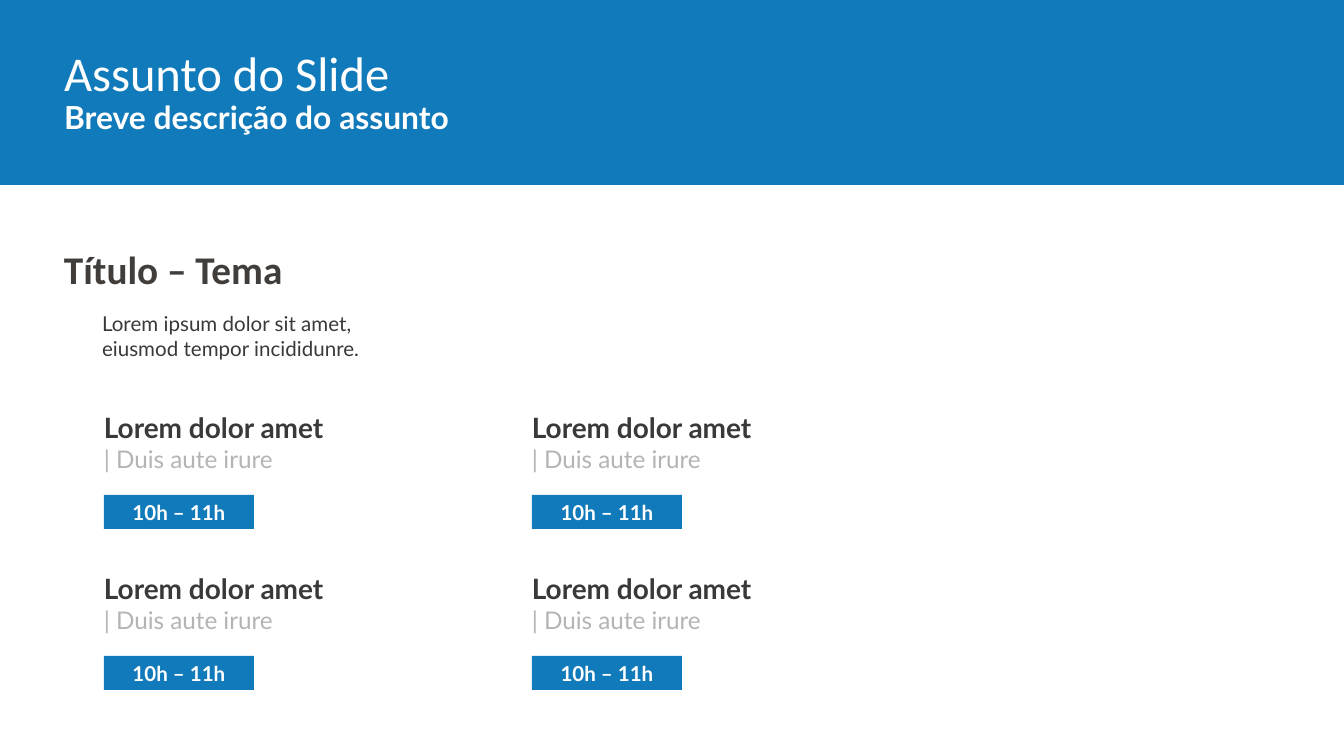
from copy import deepcopy

from pptx import Presentation
from pptx.dml.color import RGBColor
from pptx.enum.shapes import MSO_SHAPE as Shape
from pptx.enum.text import MSO_ANCHOR as Anchor, MSO_AUTO_SIZE as AutoSize, PP_ALIGN as Align
from pptx.util import Pt

EMU_PER_PX = 914400 / 134.4
BLUE = RGBColor(0x11, 0x7A, 0xBA)
WHITE = RGBColor(0xFF, 0xFF, 0xFF)
DARK = RGBColor(0x39, 0x39, 0x39)
BROWN = RGBColor(0x40, 0x3D, 0x3B)
GRAY = RGBColor(0xB4, 0xB4, 0xB4)

TITLE = ("Assunto do Slide", "Calibri", 26, WHITE, False)
TEXTS = [
    ((64, 98, 504, 62), ("Breve descrição do assunto", "Lato", 17, WHITE, True), 0),
    ((64, 245, 450, 46), ("Título – Tema", "Calibri", 21, BROWN, True), 0),
    ((102, 311, 317, 60),
     ("Lorem ipsum dolor sit amet, eiusmod tempor incididunre.", "Lato", 11, DARK, False), 8),
]
SESSIONS = [
    [("Lorem dolor amet", "| Duis aute irure", "10h – 11h"),
     ("Lorem dolor amet", "| Duis aute irure", "10h – 11h")],
    [("Lorem dolor amet", "| Duis aute irure", "10h – 11h"),
     ("Lorem dolor amet", "| Duis aute irure", "10h – 11h")],
]
GRID_LEFT, GRID_TOP = 104, 411
COLUMN_STEP, ROW_STEP = 428, 161
TIME_OFFSET = 84


def px(value):
    return round(value * EMU_PER_PX)


def add_run(para, text, font_name, size, color, bold):
    run = para.add_run()
    run.text = text
    run.font.name = font_name
    run.font.size = Pt(size)
    run.font.bold = bold
    run.font.color.rgb = color
    return run


def prepare_frame(frame, anchor=Anchor.TOP, align=Align.LEFT):
    frame.margin_left = frame.margin_top = frame.margin_right = frame.margin_bottom = 0
    frame.word_wrap = True
    frame.auto_size = AutoSize.NONE
    frame.vertical_anchor = anchor
    para = frame.paragraphs[0]
    para.alignment = align
    return para


def add_text(page, area, lines, space_after=0):
    box = page.shapes.add_textbox(*map(px, area))
    para = prepare_frame(box.text_frame)
    para.space_after = Pt(space_after)
    for index, line in enumerate(lines):
        if index:
            para.add_line_break()
            para._p[-1].append(deepcopy(run._r.rPr))
        run = add_run(para, *line)


def add_bar(page, area):
    bar = page.shapes.add_shape(Shape.RECTANGLE, *map(px, area))
    bar.shadow.inherit = False
    bar.fill.solid()
    bar.fill.fore_color.rgb = BLUE
    bar.line.fill.background()
    return bar


def add_session(page, left, top, name, detail, time):
    lines = [(name, "Lato", 15, DARK, True), (detail, "Lato", 13, GRAY, False)]
    add_text(page, (left, top, 243, 71), lines, 8)
    bar = add_bar(page, (left, top + TIME_OFFSET, 150, 34))
    para = prepare_frame(bar.text_frame, Anchor.MIDDLE, Align.CENTER)
    add_run(para, time, "Lato", 11, WHITE, True)


def main():
    deck = Presentation()
    deck.slide_width, deck.slide_height = px(1344), px(756)
    page = deck.slides.add_slide(deck.slide_layouts[5])

    title = page.shapes.title
    title.left, title.top, title.width, title.height = map(px, (64, 43, 450, 56))
    add_run(prepare_frame(title.text_frame), *TITLE)
    band = add_bar(page, (0, 0, 1344, 185))
    title._element.addprevious(band._element)

    for area, line, space_after in TEXTS:
        add_text(page, area, [line], space_after)
    for row, sessions in enumerate(SESSIONS):
        for column, session in enumerate(sessions):
            left = GRID_LEFT + column * COLUMN_STEP
            top = GRID_TOP + row * ROW_STEP
            add_session(page, left, top, *session)
    deck.save("out.pptx")


if __name__ == "__main__":
    main()
